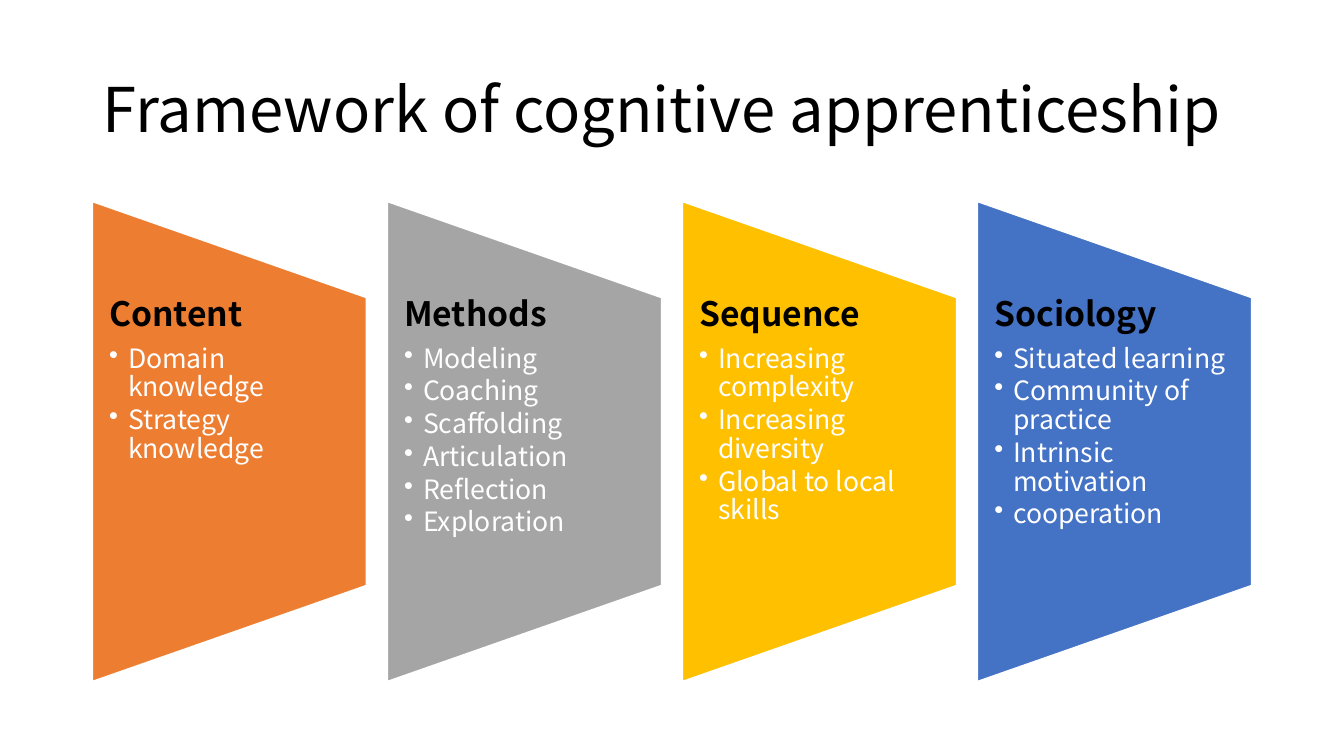
from lxml import etree
from pptx import Presentation
from pptx.dml.color import RGBColor
from pptx.enum.shapes import MSO_SHAPE
from pptx.enum.text import MSO_ANCHOR, PP_ALIGN
from pptx.oxml.ns import qn
from pptx.util import Pt

EMU_PER_PX = 9525
FONT = "Noto Sans CJK SC"
PANEL_SHAPE = MSO_SHAPE.FLOWCHART_MANUAL_OPERATION
TOP, MIDDLE = MSO_ANCHOR.TOP, MSO_ANCHOR.MIDDLE
LEFT = PP_ALIGN.LEFT

BLACK = RGBColor(0x00, 0x00, 0x00)
WHITE = RGBColor(0xFF, 0xFF, 0xFF)
ORANGE = RGBColor(0xED, 0x7D, 0x31)
GRAY = RGBColor(0xA5, 0xA5, 0xA5)
GOLD = RGBColor(0xFF, 0xC0, 0x00)
BLUE = RGBColor(0x44, 0x72, 0xC4)

COLUMN_LEFT, COLUMN_PITCH, COLUMN_WIDTH = 88, 281, 261
PANEL_TOP, PANEL_HEIGHT = 192, 457
TEXT_TOP, TEXT_HEIGHT = 283, 275
BULLET_INDENT = 18

COLUMNS = [
    ("Content", ORANGE, ["Domain knowledge", "Strategy knowledge"]),
    ("Methods", GRAY, ["Modeling", "Coaching", "Scaffolding",
                       "Articulation", "Reflection", "Exploration"]),
    ("Sequence", GOLD, ["Increasing complexity", "Increasing diversity",
                        "Global to local skills"]),
    ("Sociology", BLUE, ["Situated learning", "Community of practice",
                         "Intrinsic motivation", "cooperation"]),
]


def px(value):
    return round(value * EMU_PER_PX)


def add_text_frame(slide, left, top, width, height, anchor, side, edge):
    box = slide.shapes.add_textbox(px(left), px(top), px(width), px(height))
    frame = box.text_frame
    frame.word_wrap = True
    frame.vertical_anchor = anchor
    frame.margin_left = frame.margin_right = px(side)
    frame.margin_top = frame.margin_bottom = px(edge)
    return frame


def write_line(paragraph, text, size, color, bold=False):
    paragraph.alignment = LEFT
    paragraph.line_spacing = 0.9
    run = paragraph.add_run()
    run.text = text
    run.font.name = FONT
    run.font.size = Pt(size)
    run.font.bold = bold
    run.font.color.rgb = color


def set_space_after(paragraph, percent):
    properties = paragraph._p.get_or_add_pPr()
    spacing = etree.SubElement(properties, qn("a:spcAft"))
    etree.SubElement(spacing, qn("a:spcPct"), val=str(percent * 1000))


def set_bullet(paragraph):
    properties = paragraph._p.get_or_add_pPr()
    properties.set("marL", str(px(BULLET_INDENT)))
    properties.set("indent", str(-px(BULLET_INDENT)))
    etree.SubElement(properties, qn("a:buChar"), char="•")


def add_title(slide, text):
    frame = add_text_frame(slide, 88, 38, 1104, 139, MIDDLE, 10, 5)
    write_line(frame.paragraphs[0], text, 44, BLACK)


def add_panel(slide, left, color):
    center_x = left + COLUMN_WIDTH / 2
    center_y = PANEL_TOP + PANEL_HEIGHT / 2
    panel = slide.shapes.add_shape(
        PANEL_SHAPE,
        px(center_x - PANEL_HEIGHT / 2), px(center_y - COLUMN_WIDTH / 2),
        px(PANEL_HEIGHT), px(COLUMN_WIDTH))
    panel.rotation = 270
    panel.shadow.inherit = False
    panel.fill.solid()
    panel.fill.fore_color.rgb = color
    panel.line.color.rgb = WHITE
    panel.line.width = Pt(1)


def add_topic(slide, left, heading, items):
    frame = add_text_frame(slide, left, TEXT_TOP, COLUMN_WIDTH, TEXT_HEIGHT, TOP, 16, 0)
    first = frame.paragraphs[0]
    write_line(first, heading, 24, BLACK, bold=True)
    set_space_after(first, 35)
    for item in items:
        paragraph = frame.add_paragraph()
        paragraph.level = 1
        write_line(paragraph, item, 19, WHITE)
        set_space_after(paragraph, 15)
        set_bullet(paragraph)


def main():
    presentation = Presentation()
    presentation.slide_width = px(1280)
    presentation.slide_height = px(720)
    slide = presentation.slides.add_slide(presentation.slide_layouts[6])
    add_title(slide, "Framework of cognitive apprenticeship")
    for index, (heading, color, items) in enumerate(COLUMNS):
        left = COLUMN_LEFT + index * COLUMN_PITCH
        add_panel(slide, left, color)
        add_topic(slide, left, heading, items)
    presentation.save("out.pptx")


if __name__ == "__main__":
    main()
